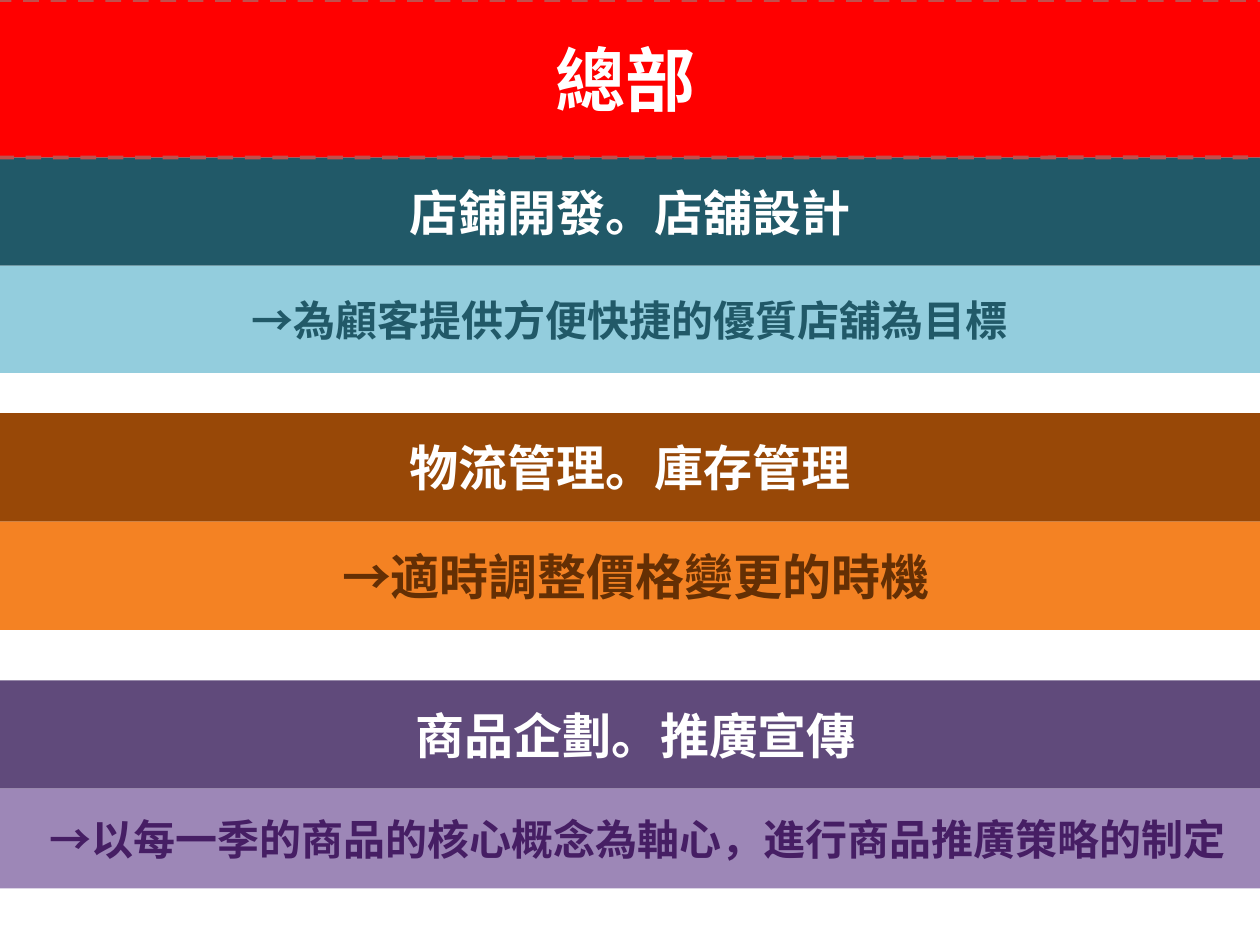
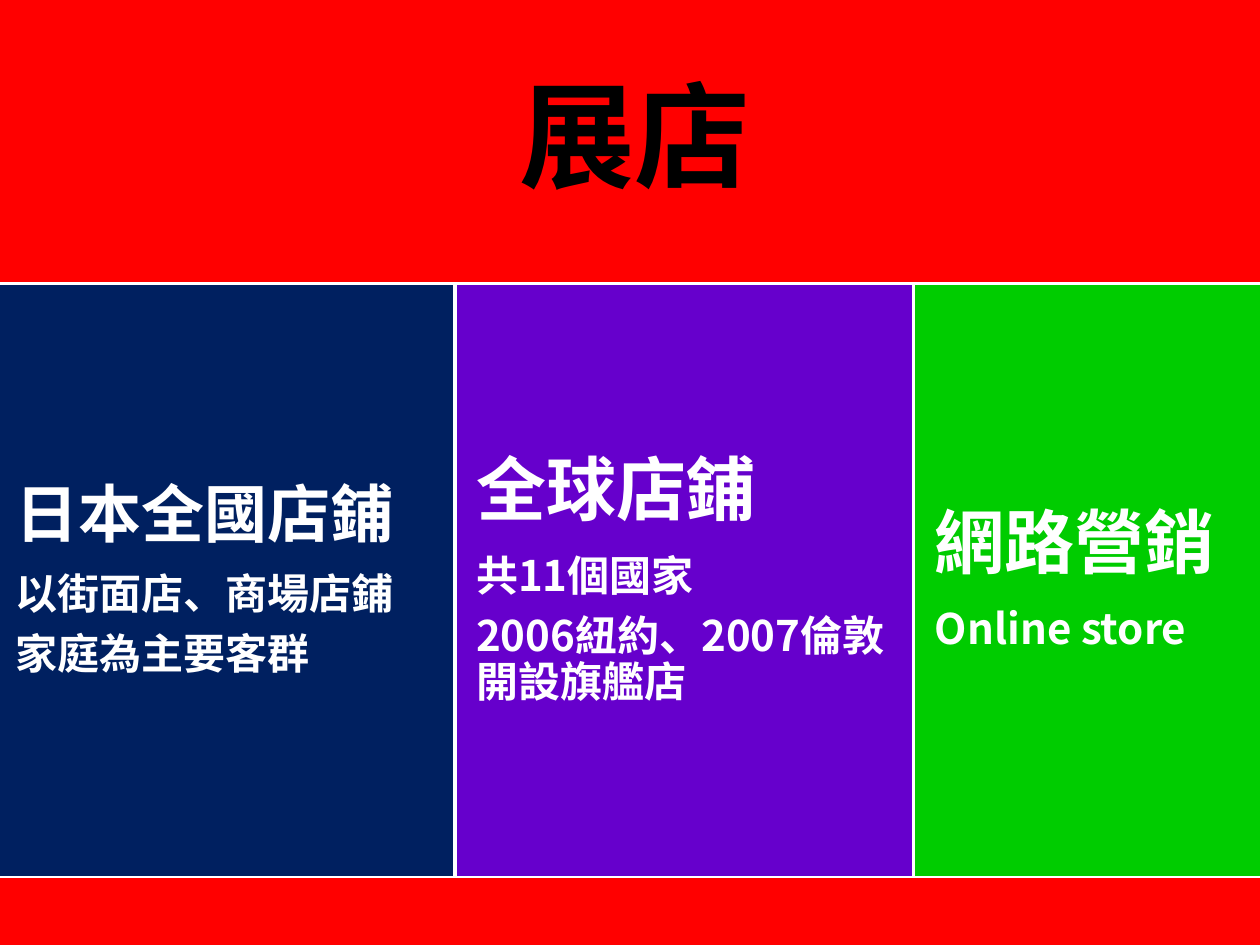
from lxml.etree import SubElement
from pptx import Presentation
from pptx.dml.color import RGBColor
from pptx.enum.dml import MSO_LINE
from pptx.enum.shapes import MSO_SHAPE
from pptx.enum.text import MSO_ANCHOR, MSO_AUTO_SIZE, PP_ALIGN
from pptx.oxml.ns import qn
from pptx.util import Inches, Pt

# Shared grid: 100 columns by 75 rows of square cells
COLUMNS, ROWS = 100, 75
CELL = Inches(10) // COLUMNS

HEADING_FONT = "Noto Sans CJK SC"
DETAIL_FONT = "Calibri"
TITLE_ONLY = 5

COLORS = {
    "white": "FFFFFF", "black": "000000", "red": "FF0000", "brick": "C0504D",
    "teal": "215968", "sky": "93CDDD",
    "brown": "984807", "orange": "F47E1C", "dark brown": "642F04",
    "plum": "604A7B", "lilac": "9D87B7", "violet": "461E64",
    "navy": "002060", "purple": "6600CC", "green": "00CC00",
}


def color(name):
    return RGBColor.from_string(COLORS[name])


def cells(*counts):
    return [round(count * CELL) for count in counts]


def add_block(slide, box, fill, line=None, line_width=2, kind=MSO_SHAPE.RECTANGLE):
    """Add a flat filled shape; box is left, top, width, height in cells."""
    shape = slide.shapes.add_shape(kind, *cells(*box))
    shape.shadow.inherit = False
    shape.fill.solid()
    shape.fill.fore_color.rgb = color(fill)
    if line:
        shape.line.color.rgb = color(line)
        shape.line.width = Pt(line_width)
    else:
        shape.line.fill.background()
    return shape


def set_opacity(shape, percent):
    rgb = shape.fill._xPr.find(qn("a:solidFill"))[0]
    SubElement(rgb, qn("a:alpha")).set("val", str(percent * 1000))


def write_text(shape, lines, text_color, font=HEADING_FONT,
               align=PP_ALIGN.CENTER, inset=None, tight=False):
    """Write (text, size) lines in bold, one paragraph each."""
    frame = shape.text_frame
    frame.word_wrap = True
    frame.auto_size = MSO_AUTO_SIZE.NONE
    frame.vertical_anchor = MSO_ANCHOR.MIDDLE
    if inset is not None:
        frame.margin_left = frame.margin_right = Inches(inset)
        frame.margin_top = frame.margin_bottom = Inches(inset)
    for index, (text, size) in enumerate(lines):
        paragraph = frame.add_paragraph() if index else frame.paragraphs[0]
        paragraph.alignment = align
        if tight:
            paragraph.line_spacing = 0.9
            paragraph.space_after = Pt(round(0.35 * size, 1))
        run = paragraph.add_run()
        run.text = text
        run.font.name = font
        run.font.size = Pt(size)
        run.font.bold = True
        run.font.color.rgb = color(text_color)
        east_asian = SubElement(run.font._element, qn("a:ea"))
        east_asian.set("typeface", HEADING_FONT)


def add_title(slide, box, text, size, text_color, **text_options):
    """Lay the title placeholder over the banner, in front of everything."""
    title = slide.shapes.title
    title.left, title.top, title.width, title.height = cells(*box)
    write_text(title, [(text, size)], text_color, **text_options)
    title.element.getparent().append(title.element)


def add_department(slide, top, heading, detail):
    """Add a dark heading band with a lighter detail band right below it."""
    heading_height = 8.6
    text, left, width, fill = heading
    band = add_block(slide, (left, top, width, heading_height), fill)
    write_text(band, [(text, 28)], "white")

    text, size, left, width, height, fill, text_color = detail
    band = add_block(slide, (left, top + heading_height, width, height), fill)
    write_text(band, [(text, size)], text_color, DETAIL_FONT)
    return band


def build_headquarters(presentation):
    slide = presentation.slides.add_slide(presentation.slide_layouts[TITLE_ONLY])

    # Departments
    add_department(
        slide, 12.5, ("店鋪開發。店舖設計", 0, COLUMNS, "teal"),
        ("→為顧客提供方便快捷的優質店舖為目標", 24, 0, COLUMNS, 8.5, "sky", "teal"))
    logistics = add_department(
        slide, 32.8, ("物流管理。庫存管理", 0, COLUMNS, "brown"),
        ("→適時調整價格變更的時機", 28, -0.2, 101.3, 8.6, "orange", "dark brown"))
    set_opacity(logistics, 97)
    add_department(
        slide, 54, ("商品企劃。推廣宣傳", -0.2, 101.3, "plum"),
        ("→以每一季的商品的核心概念為軸心，進行商品推廣策略的制定",
         24, 0, 101.2, 7.9, "lilac", "violet"))

    # Title banner
    banner_box = (-3.5, 0, 106.3, 12.5)
    banner = add_block(slide, banner_box, "red", "brick", 2.25,
                       MSO_SHAPE.ROUNDED_RECTANGLE)
    banner.line.dash_style = MSO_LINE.DASH
    add_title(slide, banner_box, "總部", 40, "white")


def build_expansion(presentation):
    slide = presentation.slides.add_slide(presentation.slide_layouts[TITLE_ONLY])
    left, width = -0.4, 101.6
    panel_top, panel_height = 22.5, 47.2
    panel_bottom = panel_top + panel_height

    # Title banner
    banner_box = (left, 0, width, panel_top)
    add_block(slide, banner_box, "red")

    # Store channels, side by side
    channels = [
        (36.4, "navy", 0.15, [("日本全國店鋪", 36), ("以街面店、商場店鋪", 24),
                              ("家庭為主要客群", 24)]),
        (36.4, "purple", 0.17, [("全球店鋪", 40), ("共11個國家", 24),
                                ("2006紐約、2007倫敦開設旗艦店", 24)]),
        (28.7, "green", 0.17, [("網路營銷", 40), ("Online store", 24)]),
    ]
    panel_left = -0.3
    for panel_width, fill, inset, lines in channels:
        panel = add_block(slide, (panel_left, panel_top, panel_width, panel_height),
                          fill, "white")
        write_text(panel, lines, "white", align=PP_ALIGN.LEFT, inset=inset, tight=True)
        panel_left += panel_width

    # Footer band
    add_block(slide, (left, panel_bottom, width, ROWS - panel_bottom), "red")
    add_title(slide, banner_box, "展店", 66, "black", inset=0.28, tight=True)


def main():
    presentation = Presentation()
    presentation.slide_width = COLUMNS * CELL
    presentation.slide_height = ROWS * CELL
    build_headquarters(presentation)
    build_expansion(presentation)
    presentation.save("out.pptx")


if __name__ == "__main__":
    main()
